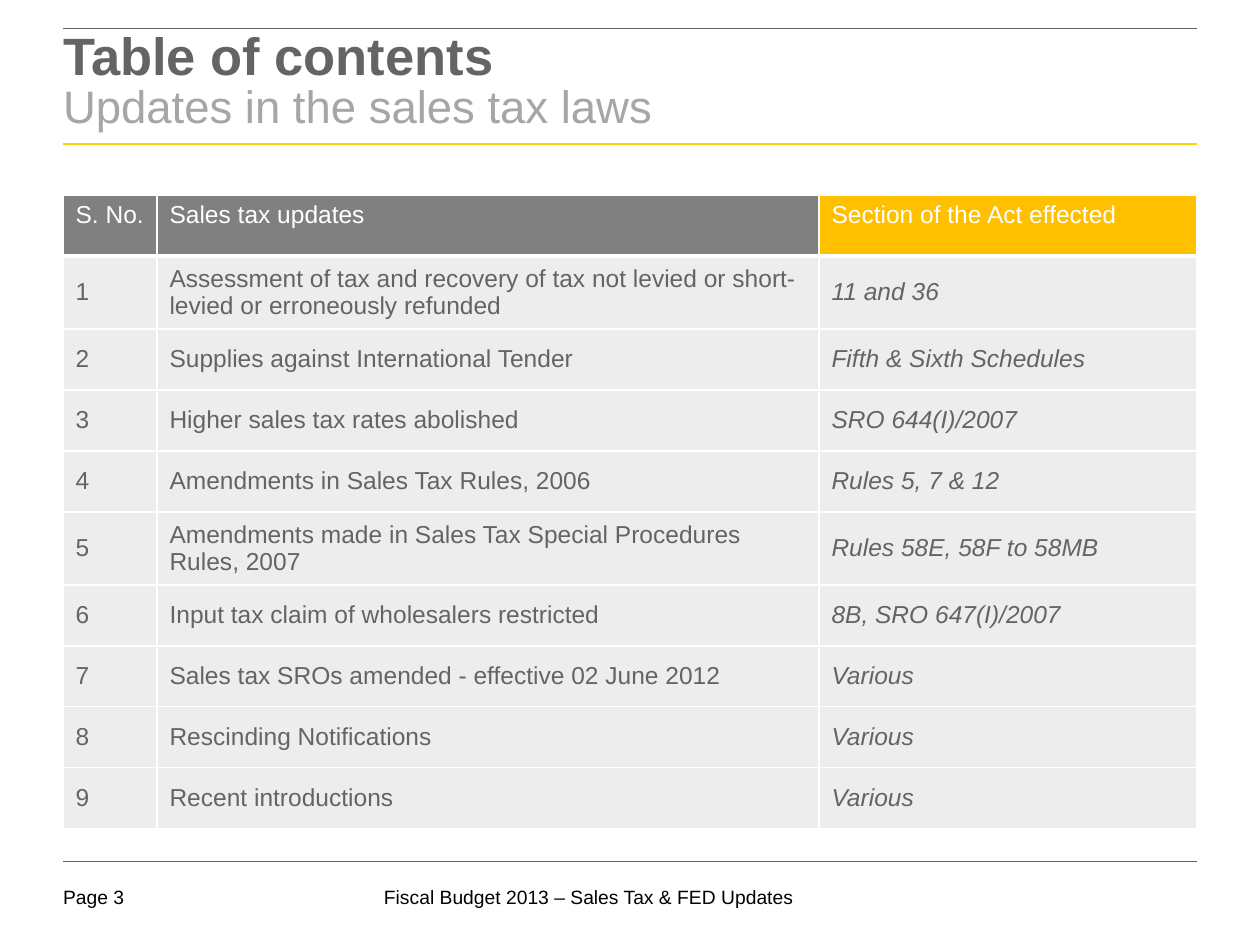
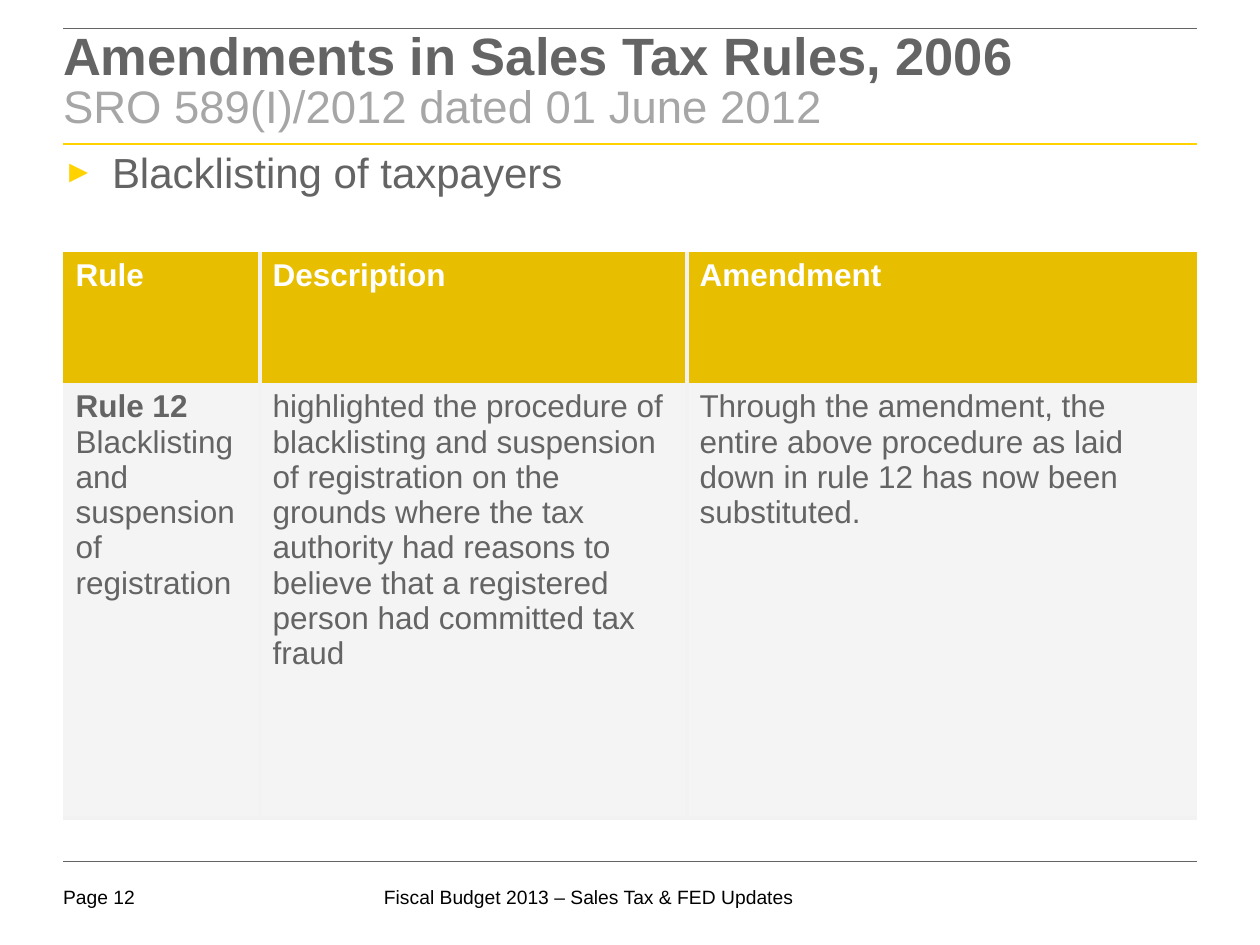
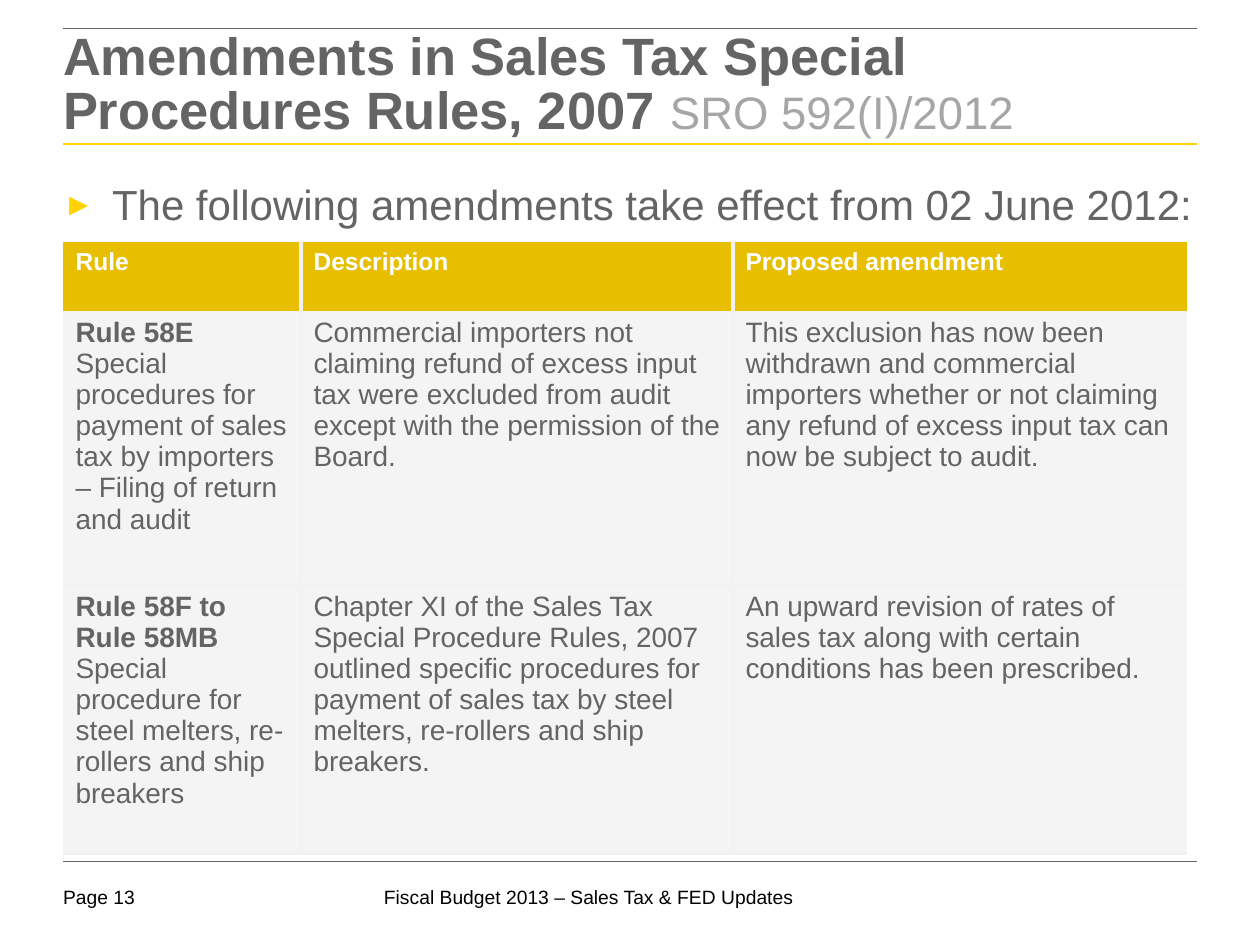
"""Build three sales tax update slides with tables in a shared frame."""
from lxml.etree import SubElement
from pptx import Presentation
from pptx.dml.color import RGBColor
from pptx.enum.shapes import MSO_CONNECTOR
from pptx.enum.text import MSO_ANCHOR, MSO_AUTO_SIZE, PP_ALIGN
from pptx.oxml.ns import qn
from pptx.util import Emu, Inches, Pt

SCALE = 914400 / 126
LEFT, WIDTH = 63, 1134
GREY, SILVER, YELLOW, GOLD = "646464", "A6A6A6", "FFD200", "E7BE00"
WHITE, PALE, EDGE = "FFFFFF", "F4F4F4", "F2F2F2"
NO_STYLE = "{2D5ABB26-0587-4C30-8999-92F81FD0307C}"
BOLD, ITALIC = {"bold": True}, {"italic": True}


def px(*values):
    return [Emu(round(v * SCALE)) for v in values]


def rgb(value):
    return RGBColor.from_string(value)


def white_grid(row, col, last):
    return {"L": (WHITE, 1), "R": (WHITE, 1),
            "T": (WHITE, 3 if row == 1 else 1), "B": (WHITE, 1 if row else 3)}


def column_gaps(row, col, last):
    shown = {"L": col > 0, "R": col < last, "T": row > 1, "B": row > 0}
    return {side: (EDGE, 3) for side, on in shown.items() if on}


class Deck:
    """Holds the style and the current slide."""

    font = "Arial"
    footer = "Fiscal Budget 2013 – Sales Tax & FED Updates"

    def __init__(self):
        self.prs = Presentation()
        self.prs.slide_width, self.prs.slide_height = Inches(10), Inches(7.5)
        self.s = None

    def slide(self, page, title, has_body=True):
        self.s = self.prs.slides.add_slide(self.prs.slide_layouts[1 if has_body else 5])
        self.title(title)
        self.text(384, 885, 466, 28, self.footer)
        self.text(LEFT, 885, 92, 28, f"Page {page}")
        for y, color, weight in ((144, YELLOW, 1.5), (861, GREY, 0.25), (28, GREY, 0.5)):
            self.rule(y, color, weight)

    def run(self, p, text, size, color, **fmt):
        r = p.add_run()
        r.text = text
        for key, value in {"name": self.font, "size": Pt(size), "bold": False, **fmt}.items():
            setattr(r.font, key, value)
        r.font.color.rgb = rgb(color)

    def frame(self, sp, top=0):
        tf = sp.text_frame
        settings = {"word_wrap": True, "auto_size": MSO_AUTO_SIZE.NONE,
                    "vertical_anchor": MSO_ANCHOR.TOP, "margin_left": 0,
                    "margin_right": 0, "margin_top": px(top)[0], "margin_bottom": 0}
        for key, value in settings.items():
            setattr(tf, key, value)
        return tf.paragraphs[0]

    def place(self, sp, *box):
        for key, value in zip(("left", "top", "width", "height"), px(*box)):
            setattr(sp, key, value)

    def text(self, x, y, w, h, text):
        sp = self.s.shapes.add_textbox(*px(x, y, w, h))
        self.run(self.frame(sp), text, 11, "000000")

    def rule(self, y, color, weight):
        sp = self.s.shapes.add_connector(MSO_CONNECTOR.STRAIGHT, *px(LEFT, y, LEFT + WIDTH, y))
        sp.line.color.rgb = rgb(color)
        sp.line.width = Pt(weight)
        SubElement(sp._element.spPr, qn("a:effectLst"))

    def title(self, title):
        sp = self.s.shapes.title
        self.place(sp, LEFT, 28, WIDTH, 118)
        p = self.frame(sp, 5)
        p.alignment, p.line_spacing = PP_ALIGN.LEFT, 0.85
        heading, separator, detail = title
        self.run(p, heading, 30, GREY, bold=True)
        if separator == "\n":
            p.add_line_break()
            SubElement(p._p[-1], qn("a:rPr"), sz="3000")
        else:
            self.run(p, separator, 30, GREY, bold=True)
        self.run(p, detail, 26, SILVER)

    def bullet(self, y, h, text):
        sp = self.s.placeholders[1]
        self.place(sp, LEFT, y, WIDTH, h)
        p = self.frame(sp)
        pPr = p._p.get_or_add_pPr()
        indent = px(49)[0]
        pPr.set("marL", str(indent))
        pPr.set("indent", str(-indent))
        SubElement(SubElement(pPr, qn("a:buClr")), qn("a:srgbClr"), val=YELLOW)
        SubElement(pPr, qn("a:buSzPct"), val="75000")
        SubElement(pPr, qn("a:buFont"), typeface=self.font)
        SubElement(pPr, qn("a:buChar"), char="►")
        self.run(p, text, 24, GREY)

    def borders(self, cell, edges):
        tcPr = cell._tc.get_or_add_tcPr()
        for side in "LRTB":
            color, weight = edges.get(side, (None, 0))
            ln = SubElement(tcPr, qn(f"a:ln{side}"), w=str(Pt(weight)))
            if color:
                SubElement(SubElement(ln, qn("a:solidFill")), qn("a:srgbClr"), val=color)
            else:
                SubElement(ln, qn("a:noFill"))

    def cell(self, cell, content, size, color, fill, edges, **fmt):
        self.borders(cell, edges)
        cell.fill.solid()
        cell.fill.fore_color.rgb = rgb(fill)
        paragraphs = [[(content, {})]] if isinstance(content, str) else content
        tf = cell.text_frame
        for i, runs in enumerate(paragraphs):
            p = tf.add_paragraph() if i else tf.paragraphs[0]
            p.alignment = PP_ALIGN.LEFT
            for text, own in runs:
                self.run(p, text, size, color, **{**fmt, **own})

    def table(self, y, cols, heights, rows, sizes, fills, body_fill, edges,
              head_fmt=BOLD, last_fmt=None, anchor=MSO_ANCHOR.TOP):
        box = px(LEFT, y, sum(cols), sum(heights))
        table = self.s.shapes.add_table(len(rows), len(cols), *box).table
        table.first_row = table.horz_banding = False
        table._tbl.tblPr.find(qn("a:tableStyleId")).text = NO_STYLE
        for column, width in zip(table.columns, px(*cols)):
            column.width = width
        for row, height in zip(table.rows, px(*heights)):
            row.height = height
        last = len(cols) - 1
        for r, row in enumerate(rows):
            for c, content in enumerate(row):
                cell, lines = table.cell(r, c), edges(r, c, last)
                if r == 0:
                    self.cell(cell, content, sizes[0], WHITE, fills[c], lines, **head_fmt)
                else:
                    cell.vertical_anchor = anchor
                    fmt = last_fmt if last_fmt and c == last else {}
                    self.cell(cell, content, sizes[1], GREY, body_fill, lines, **fmt)


def main():
    deck = Deck()

    deck.slide(3, ("Table of contents", "\n", "Updates in the sales tax laws"), has_body=False)
    updates = [
        ("Assessment of tax and recovery of tax not levied or short-levied or "
         "erroneously refunded", "11 and 36"),
        ("Supplies against International Tender", "Fifth & Sixth Schedules"),
        ("Higher sales tax rates abolished", "SRO 644(I)/2007"),
        ("Amendments in Sales Tax Rules, 2006", "Rules 5, 7 & 12"),
        ("Amendments made in Sales Tax Special Procedures Rules, 2007",
         "Rules 58E, 58F to 58MB"),
        ("Input tax claim of wholesalers restricted", "8B, SRO 647(I)/2007"),
        ("Sales tax SROs amended - effective 02 June 2012", "Various"),
        ("Rescinding Notifications", "Various"),
        ("Recent introductions", "Various"),
    ]
    rows = [("S. No.", "Sales tax updates", "Section of the Act effected")]
    rows += [(str(n), *update) for n, update in enumerate(updates, 1)]
    heights = [73 if r in (1, 5) else 61 for r in range(len(rows))]
    deck.table(195, (94, 662, 378), heights, rows, (14, 14), ("808080", "808080", "FFC000"),
               "EDEDED", white_grid, head_fmt={}, last_fmt=ITALIC, anchor=MSO_ANCHOR.MIDDLE)

    deck.slide(12, ("Amendments in Sales Tax Rules, 2006", "\n",
                    "SRO 589(I)/2012 dated 01 June 2012"))
    deck.bullet(146, 704, "Blacklisting of taxpayers")
    rows = [
        ("Rule", "Description", "Amendment"),
        ([[("Rule 12 ", BOLD), ("Blacklisting and suspension of registration", {})]],
         "highlighted the procedure of blacklisting and suspension of registration on the "
         "grounds where the tax authority had reasons to believe that a registered person "
         "had committed tax fraud",
         "Through the amendment, the entire above procedure as laid down in rule 12 has now "
         "been substituted."),
    ]
    deck.table(252, (197, 427, 510), (131, 435), rows, (18, 18), [GOLD] * 3, PALE, column_gaps)

    deck.slide(13, ("Amendments in Sales Tax Special Procedures Rules, 2007", " ",
                    "SRO 592(I)/2012"))
    deck.bullet(179, 639, "The following amendments take effect from 02 June 2012:")
    rows = [
        ("Rule", "Description", "Proposed amendment"),
        ([[("Rule 58E", BOLD)],
          [("Special procedures for payment of sales tax by importers – Filing of return "
            "and audit", {})]],
         "Commercial importers not claiming refund of excess input tax were excluded from "
         "audit except with the permission of the Board.",
         "This exclusion has now been withdrawn and commercial importers whether or not "
         "claiming any refund of excess input tax can now be subject to audit."),
        ([[("Rule 58F to Rule 58MB", BOLD)],
          [("Special procedure for steel melters, re-rollers and ship breakers", {})]],
         "Chapter XI of the Sales Tax Special Procedure Rules, 2007 outlined specific "
         "procedures for payment of sales tax by steel melters, re-rollers and ship breakers.",
         "An upward revision of rates of sales tax along with certain conditions has been "
         "prescribed."),
    ]
    deck.table(242, (238, 432, 454), (69, 274, 268), rows, (14, 16), [GOLD] * 3, PALE,
               column_gaps)

    deck.prs.save("out.pptx")


if __name__ == "__main__":
    main()
